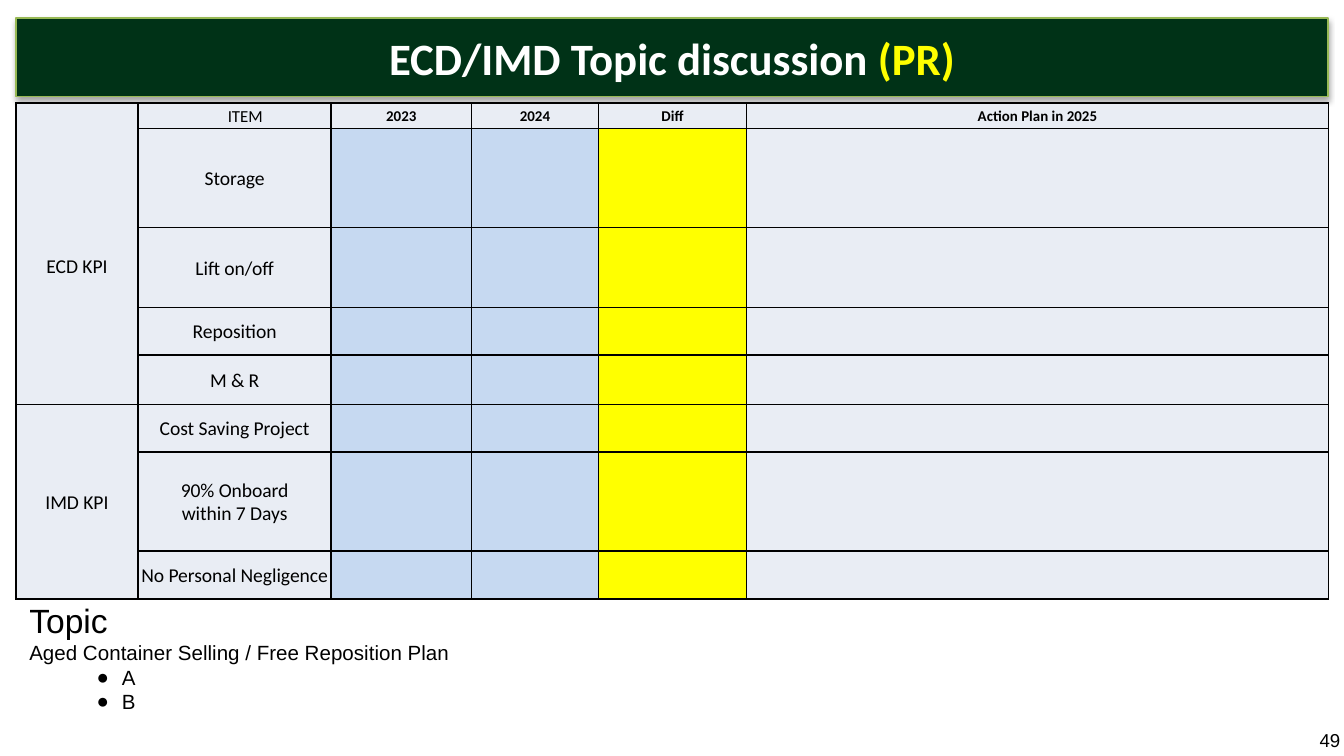
from lxml import etree
from pptx import Presentation
from pptx.dml.color import RGBColor
from pptx.enum.text import MSO_ANCHOR as Anchor, MSO_AUTO_SIZE as AutoSize, PP_ALIGN as Align
from pptx.oxml import parse_xml
from pptx.oxml.ns import nsdecls, qn
from pptx.util import Cm, Pt

GREEN, LIME, YELLOW = "003217", "98B955", "FFFF00"
PALE, BLUE, BLACK, WHITE = "E9EDF4", "C6D9F1", "000000", "FFFFFF"

COLS = [2.31, 3.65, 2.65, 2.4, 2.8, 11]
HEADERS = ["ITEM", "2023", "2024", "Diff", "Action Plan in 2025"]
HEADER_HEIGHT = 0.48
GROUPS = [
    ("ECD KPI", [("Storage", 1.87), ("Lift on/off", 1.51), ("Reposition", 0.9), ("M & R", 0.92)]),
    ("IMD KPI", [("Cost Saving Project", 0.9), ("90% Onboard\nwithin 7 Days", 1.87),
                 ("No Personal Negligence", 0.9)]),
]
ROW_FILLS = [PALE, PALE, BLUE, BLUE, YELLOW, PALE]


def rgb(color):
    return RGBColor.from_string(color)


def paint(target, color):
    target.fill.solid()
    target.fill.fore_color.rgb = rgb(color)


def place(sp, box):
    sp.left, sp.top, sp.width, sp.height = (Cm(v) for v in box)


def set_margins(obj, left=0, top=0, right=0, bottom=0):
    obj.margin_left, obj.margin_top = Cm(left), Cm(top)
    obj.margin_right, obj.margin_bottom = Cm(right), Cm(bottom)


def add_text(p, text, size=10.5, font="Calibri", color=BLACK, bold=False, align=Align.LEFT):
    p.alignment = align
    p.space_before = Pt(0)
    r = p.add_run()
    r.text = text
    r.font.size, r.font.name, r.font.bold = Pt(size), font, bold
    r.font.color.rgb = rgb(color)


def set_bullet(p, char=None, margin=0, indent=0):
    pPr = p._p.get_or_add_pPr()
    pPr.set("marL", str(Cm(margin)))
    pPr.set("indent", str(Cm(indent)))
    if char:
        etree.SubElement(pPr, qn("a:buChar")).set("char", char)
    else:
        etree.SubElement(pPr, qn("a:buNone"))


def add_borders(cell):
    tcPr = cell._tc.get_or_add_tcPr()
    for side in ("lnL", "lnR", "lnT", "lnB"):
        tcPr.append(parse_xml(
            f'<a:{side} {nsdecls("a")} w="{Pt(1)}"><a:solidFill>'
            f'<a:srgbClr val="{BLACK}"/></a:solidFill></a:{side}>'))


def build_banner(slide, box):
    sp = slide.shapes.title
    place(sp, box)
    paint(sp, GREEN)
    sp.line.color.rgb = rgb(LIME)
    sp.line.width = Pt(0.75)
    sp._element.spPr.append(parse_xml(
        f'<a:effectLst {nsdecls("a")}><a:outerShdw blurRad="{Pt(3.1)}" dist="{Pt(1.8)}" '
        f'dir="5400000" rotWithShape="0"><a:srgbClr val="{BLACK}"><a:alpha val="35000"/>'
        '</a:srgbClr></a:outerShdw></a:effectLst>'))
    tf = sp.text_frame
    tf.auto_size = AutoSize.NONE
    tf.vertical_anchor = Anchor.MIDDLE
    set_margins(tf)
    for text, color in [("ECD/IMD Topic discussion ", WHITE), ("(PR)", YELLOW)]:
        add_text(tf.paragraphs[0], text, size=24, color=color, bold=True, align=Align.CENTER)


def fill_cell(cell, text, **fmt):
    lines = text.split("\n")
    tf = cell.text_frame
    for i, line in enumerate(lines):
        p = tf.add_paragraph() if i else tf.paragraphs[0]
        add_text(p, line, align=Align.CENTER, **fmt)


def build_kpi_table(slide, left, top):
    items = [item for _, group in GROUPS for item in group]
    heights = [HEADER_HEIGHT] + [height for _, height in items]
    table = slide.shapes.add_table(len(heights), len(COLS), Cm(left), Cm(top),
                                   Cm(sum(COLS)), Cm(sum(heights))).table
    table.first_row = table.horz_banding = False
    for col, width in zip(table.columns, COLS):
        col.width = Cm(width)

    # Grid: borders, fills and margins
    for i, (row, height) in enumerate(zip(table.rows, heights)):
        row.height = Cm(height)
        for cell, color in zip(row.cells, ROW_FILLS):
            add_borders(cell)
            paint(cell, color if i else PALE)
            set_margins(cell, 0.03, 0.03, 0.03)
            cell.vertical_anchor = Anchor.MIDDLE

    # Header row
    for j, text in enumerate(HEADERS, 1):
        fill_cell(table.cell(0, j), text, size=8 if j > 1 else 9, bold=j > 1)
    table.cell(0, 1).margin_left = Cm(0.43)

    # Item names
    for i, (text, _) in enumerate(items, 1):
        fill_cell(table.cell(i, 1), text)

    # Merged group names; the first group also spans the header row
    start, end = 0, 0
    for name, group in GROUPS:
        end += len(group)
        cell = table.cell(start, 0)
        cell.merge(table.cell(end, 0))
        fill_cell(cell, name)
        start = end + 1
    table.cell(0, 0).margin_top = Cm(0.48)


def build_topics(slide, box):
    sp = slide.placeholders[1]
    place(sp, box)
    tf = sp.text_frame
    tf.auto_size = AutoSize.NONE
    tf.vertical_anchor = Anchor.TOP
    lines = [("Topic", 18, 0), ("Aged Container Selling / Free Reposition Plan", 11, 0),
             ("A", 11, 1), ("B", 11, 1)]
    for i, (text, size, level) in enumerate(lines):
        p = tf.add_paragraph() if i else tf.paragraphs[0]
        p.level = level
        add_text(p, text, size=size, font="Arial")
        if level:
            set_bullet(p, "●", 1.75, -0.48)
        else:
            set_bullet(p)


def build_page_number(slide, box):
    tf = slide.shapes.add_textbox(*(Cm(v) for v in box)).text_frame
    tf.word_wrap = True
    tf.vertical_anchor = Anchor.MIDDLE
    set_margins(tf, left=0.25)
    add_text(tf.paragraphs[0], "49", size=10, font="Arial")


def main():
    prs = Presentation()
    prs.slide_width, prs.slide_height = Cm(25.4), Cm(14.28)
    slide = prs.slides.add_slide(prs.slide_layouts[1])
    build_banner(slide, (0.3, 0.34, 24.8, 1.48))
    build_kpi_table(slide, 0.3, 1.95)
    build_topics(slide, (0.3, 11.2, 24.8, 3.08))
    build_page_number(slide, (24.69, 13.69, 0.71, 0.58))
    prs.save("out.pptx")


if __name__ == "__main__":
    main()
